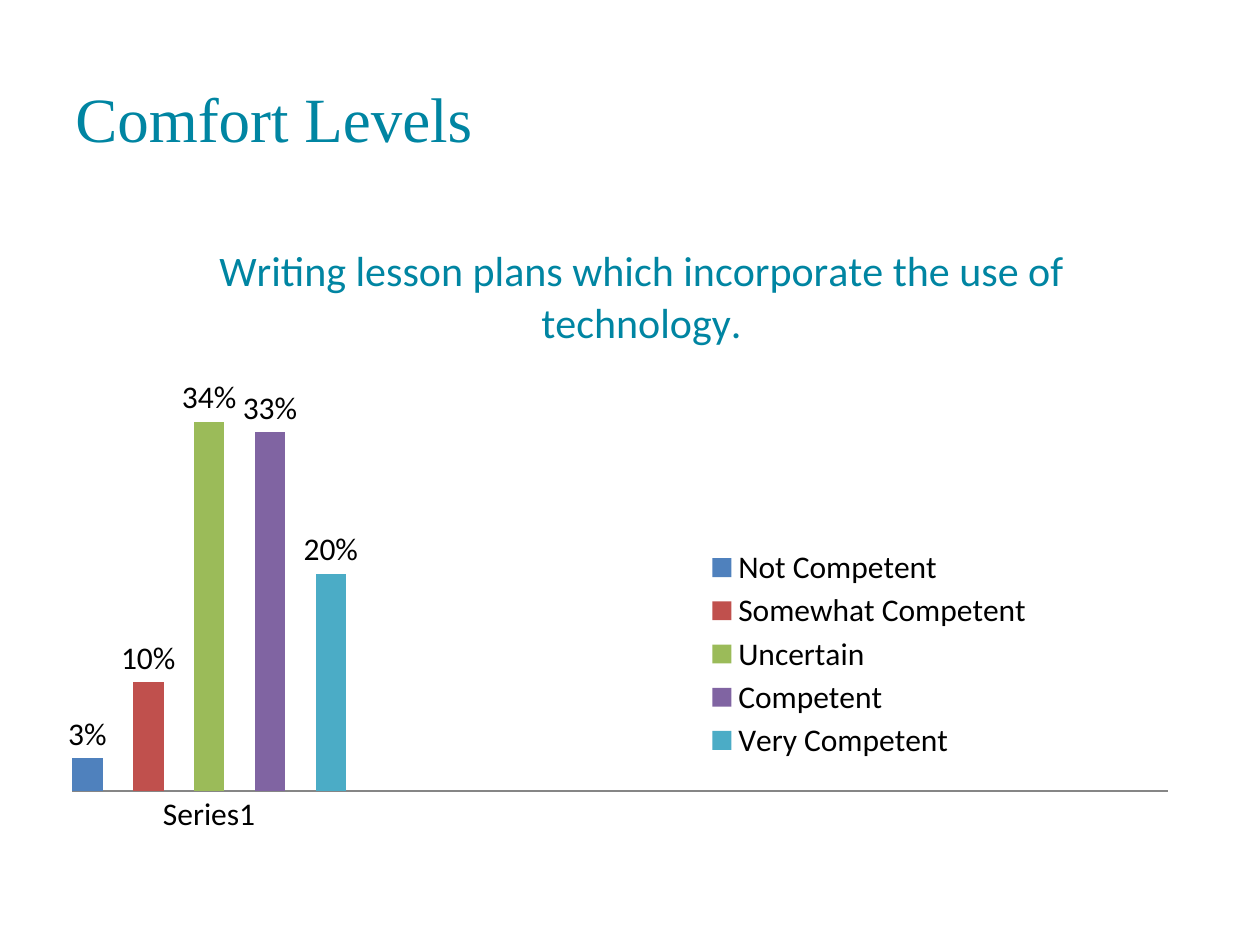
from pptx import Presentation
from pptx.chart.data import CategoryChartData
from pptx.dml.color import RGBColor
from pptx.enum.chart import XL_CHART_TYPE, XL_LABEL_POSITION, XL_LEGEND_POSITION, XL_TICK_MARK
from pptx.enum.text import MSO_ANCHOR
from pptx.oxml import parse_xml
from pptx.oxml.ns import nsdecls
from pptx.util import Emu, Pt
from dataclasses import dataclass


@dataclass(frozen=True)
class Theme:
    """Colours, fonts and type sizes of the slide."""
    teal: str = "0085A2"
    black: str = "000000"
    axis: str = "868686"
    heading_face: str = "Times New Roman"
    body_face: str = "Calibri"
    heading_size: int = 36
    question_size: int = 24
    label_size: int = 18


THEME = Theme()
EMU_PER_PX = 914400 / 126
LEVELS = [
    ("Not Competent", 0.03, "4F81BD"),
    ("Somewhat Competent", 0.10, "C0504D"),
    ("Uncertain", 0.34, "9BBB59"),
    ("Competent", 0.33, "8064A2"),
    ("Very Competent", 0.20, "4BACC6"),
]
CATEGORIES = ["Series1", "", "", ""]


def px(length):
    """Turn whole pixels into EMU."""
    return Emu(round(length * EMU_PER_PX))


def apply_format(target, **values):
    """Set each named format value on the target."""
    for name, value in values.items():
        setattr(target, name, value)


def style_font(font, face, size, color):
    """Give a font its face, size and colour."""
    apply_format(font, name=face, size=Pt(size), bold=False)
    font.color.rgb = RGBColor.from_string(color)


def add_heading(slide, text, left, top, width, height):
    """Add the slide heading."""
    frame = slide.shapes.add_textbox(*map(px, (left, top, width, height))).text_frame
    apply_format(frame, word_wrap=True, vertical_anchor=MSO_ANCHOR.MIDDLE, text=text)
    style_font(frame.paragraphs[0].runs[0].font,
               THEME.heading_face, THEME.heading_size, THEME.teal)


def place_part(chart, part, index, target=None, **fractions):
    """Place a chart part by fractions of the chart area."""
    element = chart.element.xpath(f"c:chart/c:{part}")[0]
    for layout in element.xpath("c:layout"):
        element.remove(layout)
    settings = {"layoutTarget": target} if target else {}
    settings.update(xMode="edge", yMode="edge", **fractions)
    children = "".join(f'<c:{name} val="{value}"/>' for name, value in settings.items())
    element.insert(index, parse_xml(
        f'<c:layout {nsdecls("c")}><c:manualLayout>{children}</c:manualLayout></c:layout>'))


def style_axes(chart):
    """Show a plain category line and hide the value axis."""
    apply_format(chart.value_axis, visible=False, has_major_gridlines=False,
                 minimum_scale=0, maximum_scale=0.4)
    category_axis = chart.category_axis
    apply_format(category_axis, major_tick_mark=XL_TICK_MARK.NONE,
                 minor_tick_mark=XL_TICK_MARK.NONE, has_major_gridlines=False)
    category_axis.format.line.color.rgb = RGBColor.from_string(THEME.axis)
    category_axis.format.line.width = Pt(1)


def style_levels(plot):
    """Colour each competence level and label its column."""
    apply_format(plot, gap_width=0, overlap=-100, vary_by_categories=False)
    for level, (_, _, color) in zip(plot.series, LEVELS):
        level.format.fill.solid()
        level.format.fill.fore_color.rgb = RGBColor.from_string(color)
        labels = level.data_labels
        apply_format(labels, show_value=True, number_format="0%",
                     number_format_is_linked=False, position=XL_LABEL_POSITION.OUTSIDE_END)
        style_font(labels.font, THEME.body_face, THEME.label_size, THEME.black)


def add_comfort_chart(slide, question, left, top, width, height):
    """Add the column chart of comfort levels."""
    survey = CategoryChartData(number_format="0%")
    survey.categories = CATEGORIES
    for name, share, _ in LEVELS:
        survey.add_series(name, [share] + [None] * (len(CATEGORIES) - 1))
    chart = slide.shapes.add_chart(
        XL_CHART_TYPE.COLUMN_CLUSTERED, *map(px, (left, top, width, height)), survey).chart
    style_font(chart.font, THEME.body_face, THEME.label_size, THEME.black)
    apply_format(chart, has_title=True, has_legend=True)
    title = chart.chart_title.text_frame
    title.text = question
    style_font(title.paragraphs[0].runs[0].font,
               THEME.body_face, THEME.question_size, THEME.teal)
    apply_format(chart.legend, position=XL_LEGEND_POSITION.BOTTOM, include_in_layout=False)
    style_font(chart.legend.font, THEME.body_face, THEME.label_size, THEME.black)
    style_axes(chart)
    style_levels(chart.plots[0])
    place_part(chart, "title", 1, x=0.14, y=0.04)
    place_part(chart, "plotArea", 0, target="inner", x=0.017, y=0.235, w=0.966, h=0.697)
    place_part(chart, "legend", 1, x=0.57, y=0.535, w=0.3, h=0.355)


def main():
    """Build and save the slide."""
    deck = Presentation()
    apply_format(deck, slide_width=px(1260), slide_height=px(945))
    slide = deck.slides.add_slide(deck.slide_layouts[6])
    add_heading(slide, "Comfort Levels", 63, 38, 1034, 158)
    add_comfort_chart(
        slide, "Writing lesson plans which incorporate the use of technology.",
        53, 210, 1134, 624)
    deck.save("out.pptx")


if __name__ == "__main__":
    main()
